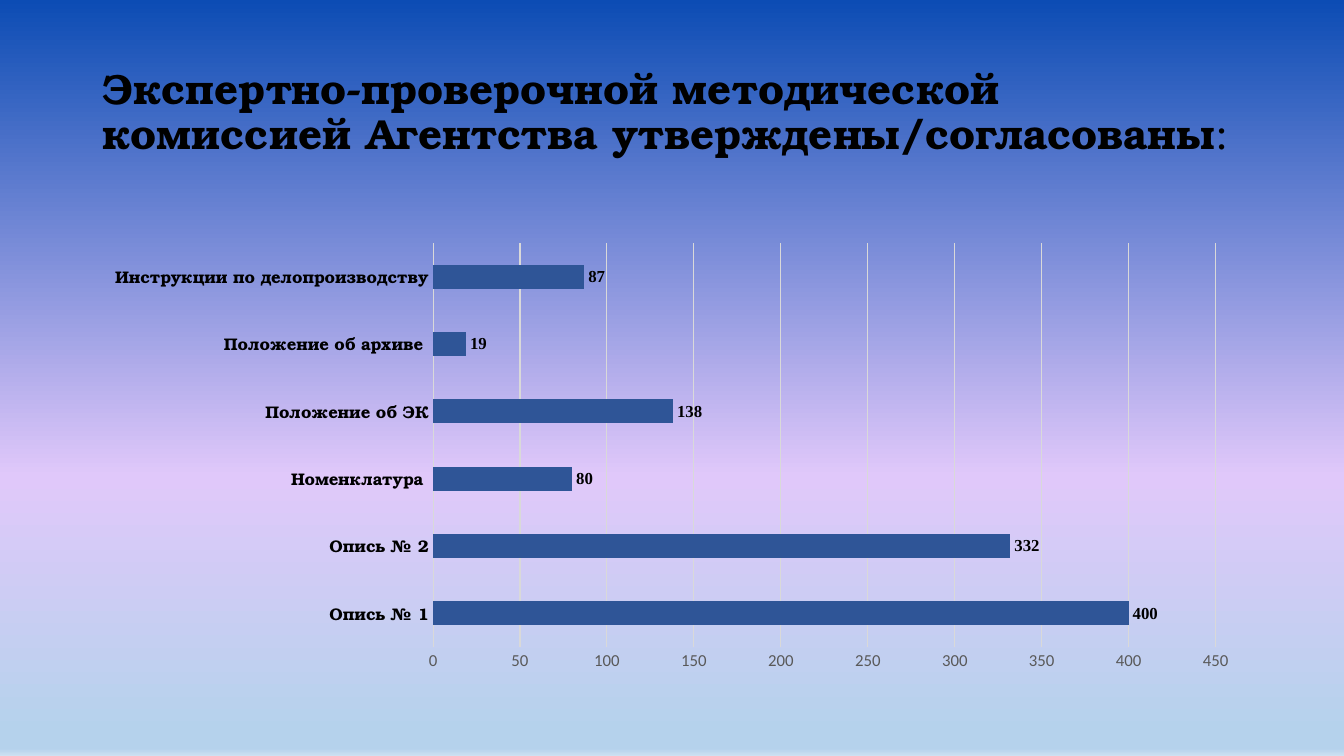
from lxml.etree import SubElement
from pptx import Presentation
from pptx.chart.data import CategoryChartData
from pptx.dml.color import RGBColor
from pptx.enum.chart import XL_CHART_TYPE, XL_LABEL_POSITION, XL_TICK_MARK
from pptx.enum.text import MSO_ANCHOR
from pptx.oxml import parse_xml
from pptx.oxml.ns import nsdecls, qn
from pptx.util import Inches, Pt


def color(value):
    return RGBColor.from_string(value)


def style(font, **values):
    font.color.rgb = color(values.pop("color"))
    for name, value in values.items():
        setattr(font, name, value)


deck = Presentation()
deck.slide_width = Inches(13.33)
deck.slide_height = Inches(7.5)
page = deck.slides.add_slide(deck.slide_layouts[6])

background = page.background.fill
background.gradient()
background.gradient_angle = 270
stops = page.background._cSld.find(".//" + qn("a:gsLst"))
for stop in list(stops):
    stops.remove(stop)
for percent, value in [(0, "0C4CB4"), (63, "E0C8FA"), (97, "B5D2EC"), (99, "B5D2EC"), (100, "CEE1F2")]:
    stop = SubElement(stops, qn("a:gs"), pos=str(percent * 1000))
    SubElement(stop, qn("a:srgbClr"), val=value)

box = page.shapes.add_textbox(Inches(0.92), Inches(0.4), Inches(11.5), Inches(1.45))
box.text_frame.word_wrap = True
box.text_frame.vertical_anchor = MSO_ANCHOR.MIDDLE
para = box.text_frame.paragraphs[0]
para.line_spacing = 0.9
title = "Экспертно-проверочной методической комиссией Агентства утверждены/согласованы"
for text, bold in [(title, True), (":", False)]:
    span = para.add_run()
    span.text = text
    style(span.font, name="TeX Gyre Bonum", size=Pt(30), bold=bold, color="000000")

approvals = {
    "Опись № 1": 400,
    "Опись № 2": 332,
    "Номенклатура ": 80,
    "Положение об ЭК": 138,
    "Положение об архиве ": 19,
    "Инструкции по делопроизводству": 87,
}
data = CategoryChartData()
data.categories = list(approvals)
data.add_series("   ", list(approvals.values()))
chart = page.shapes.add_chart(
    XL_CHART_TYPE.BAR_CLUSTERED, Inches(0.92), Inches(1.67), Inches(11.5), Inches(5.08), data
).chart
chart.has_title = False
chart.has_legend = False
style(chart.font, name="Calibri", size=Pt(10), color="000000")

plot = chart.plots[0]
plot.gap_width = 182
plot.vary_by_categories = False
bars = plot.series[0].format.fill
bars.solid()
bars.fore_color.rgb = color("2F5597")
plot.has_data_labels = True
labels = plot.data_labels
labels.show_value = True
labels.position = XL_LABEL_POSITION.OUTSIDE_END
style(labels.font, name="Times New Roman", size=Pt(12), bold=True, color="000000")

names, scale = chart.category_axis, chart.value_axis
for axis in (names, scale):
    axis.major_tick_mark = XL_TICK_MARK.NONE
    axis.minor_tick_mark = XL_TICK_MARK.NONE
style(names.tick_labels.font, name="TeX Gyre Bonum", size=Pt(12), bold=True, color="000000")
style(scale.tick_labels.font, name="Calibri", size=Pt(12), bold=False, color="595959")
scale.minimum_scale = 0
scale.maximum_scale = 450
scale.major_unit = 50
scale.format.line.fill.background()
for line in (names.format.line, scale.major_gridlines.format.line):
    line.color.rgb = color("D9D9D9")
    line.width = Pt(0.75)

area = chart._chartSpace.find(".//" + qn("c:plotArea"))
for layout in area.findall(qn("c:layout")):
    area.remove(layout)
area.insert(0, parse_xml(
    f'<c:layout {nsdecls("c")}><c:manualLayout><c:layoutTarget val="inner"/>'
    '<c:xMode val="edge"/><c:yMode val="edge"/><c:x val="0.2935"/><c:y val="0.146"/>'
    '<c:w val="0.675"/><c:h val="0.789"/></c:manualLayout></c:layout>'
))

deck.save("out.pptx")
